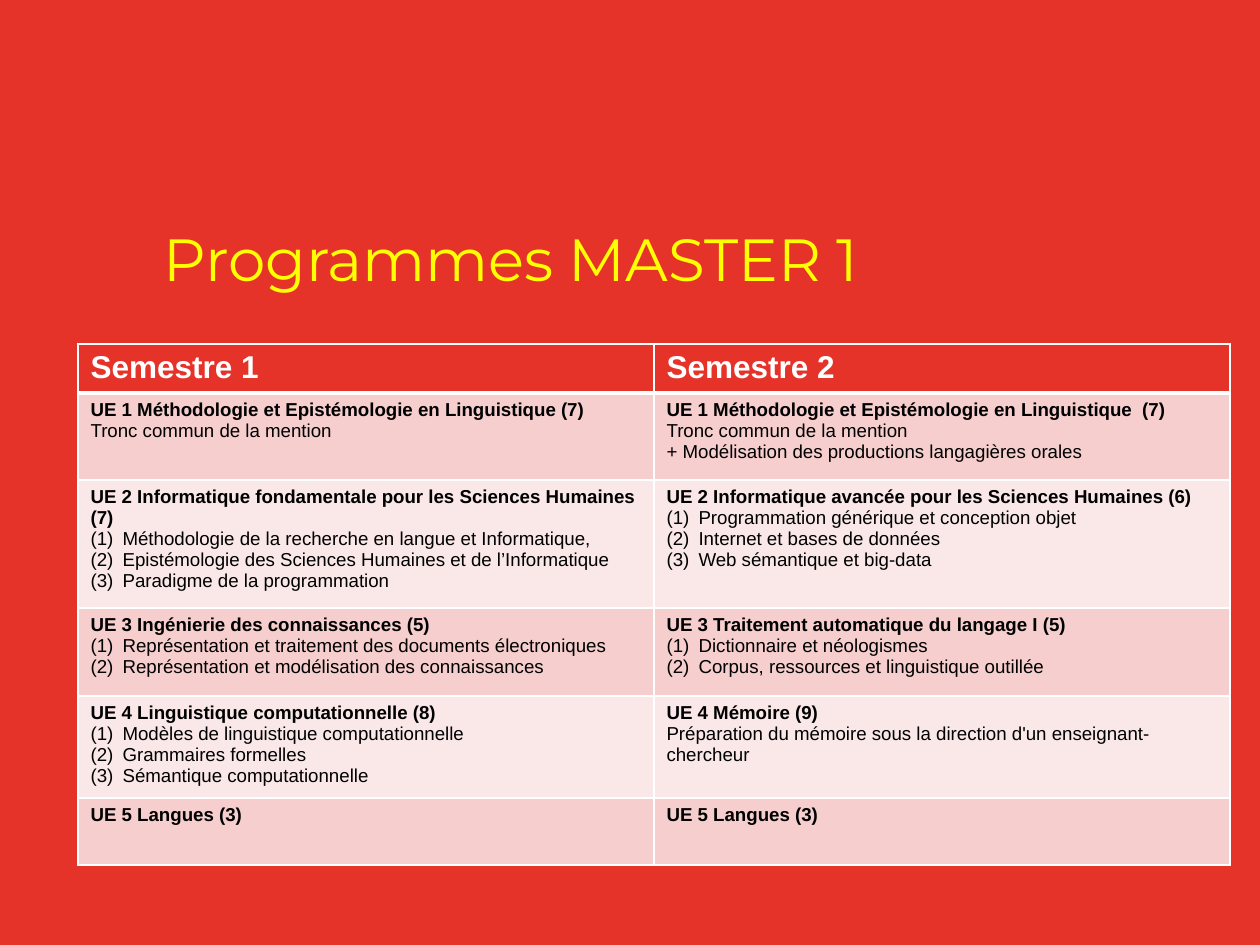
from dataclasses import dataclass

from lxml import etree
from pptx import Presentation
from pptx.dml.color import RGBColor
from pptx.enum.text import MSO_ANCHOR, MSO_AUTO_SIZE, PP_ALIGN
from pptx.oxml.ns import qn
from pptx.util import Emu, Pt

ANCHOR_BOTTOM = MSO_ANCHOR.BOTTOM
ALIGN_LEFT = PP_ALIGN.LEFT
NO_AUTOFIT = MSO_AUTO_SIZE.NONE

PX_PER_INCH = 126
COLORS = {
    "red": "E6332A",
    "yellow": "FFFF00",
    "white": "FFFFFF",
    "black": "000000",
    "dark_band": "F5CECD",
    "light_band": "FAE8E8",
}
TITLE_FONT = {"name": "Montserrat", "size": Pt(34), "bold": False}
HEADER_FONT = {"name": "Arial", "size": Pt(18), "bold": True}
UNIT_FONT = {"name": "Arial", "size": Pt(10.7), "bold": True}
DETAIL_FONT = {**UNIT_FONT, "bold": False}

COLUMN_WIDTH = 576
ROW_HEIGHTS = [49, 87, 128, 88, 102, 67]
THIN_BORDER = 1
THICK_BORDER = 3


@dataclass
class Unit:
    heading: str
    details: tuple[str, ...] = ()
    numbered: bool = False


HEADERS = ("Semestre 1", "Semestre 2")
UNITS = [
    (
        Unit("UE 1 Méthodologie et Epistémologie en Linguistique (7)",
             ("Tronc commun de la mention",)),
        Unit("UE 1 Méthodologie et Epistémologie en Linguistique  (7)",
             ("Tronc commun de la mention",
              "+ Modélisation des productions langagières orales")),
    ),
    (
        Unit("UE 2 Informatique fondamentale pour les Sciences Humaines (7)",
             ("Méthodologie de la recherche en langue et Informatique,",
              "Epistémologie des Sciences Humaines et de l’Informatique",
              "Paradigme de la programmation"), True),
        Unit("UE 2 Informatique avancée pour les Sciences Humaines (6)",
             ("Programmation générique et conception objet",
              "Internet et bases de données",
              "Web sémantique et big-data"), True),
    ),
    (
        Unit("UE 3 Ingénierie des connaissances (5)",
             ("Représentation et traitement des documents électroniques",
              "Représentation et modélisation des connaissances"), True),
        Unit("UE 3 Traitement automatique du langage I (5)",
             ("Dictionnaire et néologismes",
              "Corpus, ressources et linguistique outillée"), True),
    ),
    (
        Unit("UE 4 Linguistique computationnelle (8)",
             ("Modèles de linguistique computationnelle",
              "Grammaires formelles",
              "Sémantique computationnelle"), True),
        Unit("UE 4 Mémoire (9)",
             ("Préparation du mémoire sous la direction d'un enseignant-chercheur",)),
    ),
    (Unit("UE 5 Langues (3)"), Unit("UE 5 Langues (3)")),
]


def px(length: int) -> Emu:
    return Emu(round(length * 914400 / PX_PER_INCH))


def color(name: str) -> RGBColor:
    return RGBColor.from_string(COLORS[name])


def set_attributes(target, values: dict) -> None:
    for name, value in values.items():
        setattr(target, name, value)


def add_text(paragraph, text: str, font_values: dict, color_name: str) -> None:
    run = paragraph.add_run()
    run.text = text
    set_attributes(run.font, font_values)
    run.font.color.rgb = color(color_name)


def number_paragraph(paragraph) -> None:
    properties = paragraph._p.get_or_add_pPr()
    properties.set("marL", str(px(32)))
    properties.set("indent", str(-px(32)))
    etree.SubElement(properties, qn("a:buFont"), typeface="+mj-lt")
    etree.SubElement(properties, qn("a:buAutoNum"), type="arabicParenBoth")


def style_cell(cell, fill_name: str, top: int, bottom: int) -> None:
    properties = cell._tc.get_or_add_tcPr()
    borders = {"lnL": THIN_BORDER, "lnR": THIN_BORDER, "lnT": top, "lnB": bottom}
    for tag, width in borders.items():
        line = etree.SubElement(properties, qn(f"a:{tag}"), w=str(Pt(width)))
        fill = etree.SubElement(line, qn("a:solidFill"))
        etree.SubElement(fill, qn("a:srgbClr"), val=COLORS["white"])
    cell.fill.solid()
    cell.fill.fore_color.rgb = color(fill_name)


def write_unit(cell, unit: Unit) -> None:
    frame = cell.text_frame
    add_text(frame.paragraphs[0], unit.heading, UNIT_FONT, "black")
    for detail in unit.details:
        paragraph = frame.add_paragraph()
        if unit.numbered:
            number_paragraph(paragraph)
        add_text(paragraph, detail, DETAIL_FONT, "black")


def write_title(slide) -> None:
    title = slide.shapes.title
    set_attributes(title, {"left": px(159), "top": px(136),
                           "width": px(1038), "height": px(158)})
    frame = title.text_frame
    set_attributes(frame, {
        "auto_size": NO_AUTOFIT, "word_wrap": True, "vertical_anchor": ANCHOR_BOTTOM,
        "margin_left": px(5), "margin_right": px(5),
        "margin_top": 0, "margin_bottom": 0,
    })
    paragraph = frame.paragraphs[0]
    set_attributes(paragraph, {"alignment": ALIGN_LEFT, "line_spacing": 0.9})
    add_text(paragraph, "Programmes MASTER 1", TITLE_FONT, "yellow")


def add_programme_table(slide) -> None:
    table = slide.shapes.add_table(
        len(ROW_HEIGHTS), len(HEADERS), px(78), px(344),
        px(COLUMN_WIDTH * len(HEADERS)), px(sum(ROW_HEIGHTS)),
    ).table
    for column in table.columns:
        column.width = px(COLUMN_WIDTH)
    for row, height in zip(table.rows, ROW_HEIGHTS):
        row.height = px(height)
    for column_index, header in enumerate(HEADERS):
        cell = table.cell(0, column_index)
        style_cell(cell, "red", THIN_BORDER, THICK_BORDER)
        add_text(cell.text_frame.paragraphs[0], header, HEADER_FONT, "white")
    for row_index, units in enumerate(UNITS, start=1):
        band = "dark_band" if row_index % 2 else "light_band"
        top = THICK_BORDER if row_index == 1 else THIN_BORDER
        for column_index, unit in enumerate(units):
            cell = table.cell(row_index, column_index)
            style_cell(cell, band, top, THIN_BORDER)
            write_unit(cell, unit)


def main() -> None:
    presentation = Presentation()
    presentation.slide_width = px(1260)
    presentation.slide_height = px(945)
    slide = presentation.slides.add_slide(presentation.slide_layouts[5])
    slide.background.fill.solid()
    slide.background.fill.fore_color.rgb = color("red")
    write_title(slide)
    add_programme_table(slide)
    presentation.save("out.pptx")


if __name__ == "__main__":
    main()
